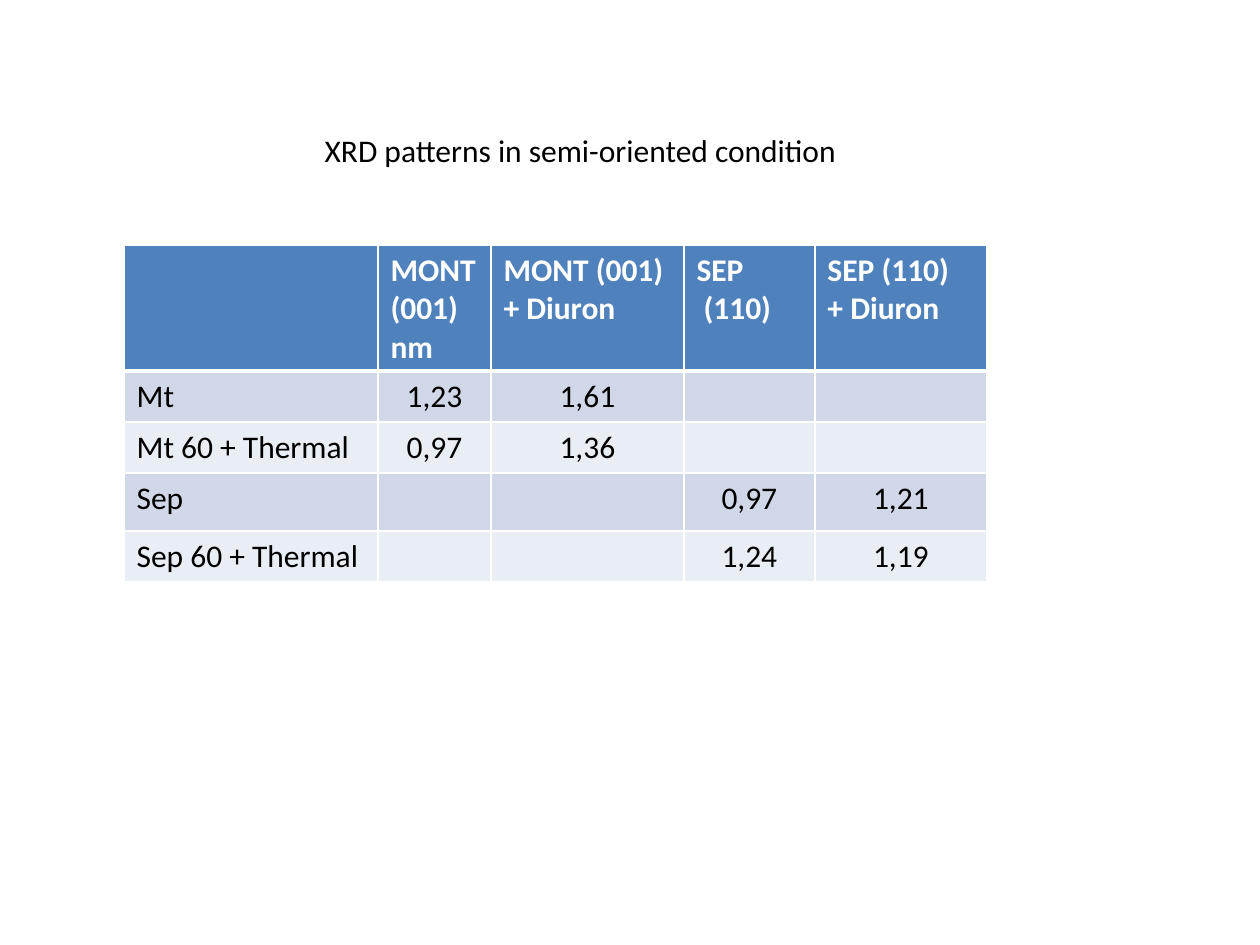
from lxml.etree import SubElement
from pptx import Presentation
from pptx.dml.color import RGBColor
from pptx.enum.text import MSO_ANCHOR as Anchor, MSO_AUTO_SIZE as AutoSize, PP_ALIGN as Align
from pptx.oxml.ns import qn
from pptx.util import Pt

EMU_PER_PX = 914400 / 126
WHITE, BLACK, BLUE = "FFFFFF", "000000", "4F81BD"
BANDS = ["D0D8E8", "E9EDF4"]
COLUMN_WIDTHS = [254, 113, 193, 131, 172]
ROW_HEIGHTS = [125, 51, 51, 58, 51]
ROWS = [
    ["", "MONT (001)\nnm", "MONT (001)\n+ Diuron", "SEP\n (110)", "SEP (110)\n+ Diuron"],
    ["Mt", "1,23", "1,61", "", ""],
    ["Mt 60 + Thermal", "0,97", "1,36", "", ""],
    ["Sep", "", "", "0,97", "1,21"],
    ["Sep 60 + Thermal", "", "", "1,24", "1,19"],
]


def px(length):
    return round(length * EMU_PER_PX)


def rgb(color):
    return RGBColor.from_string(color)


def write(frame, text, color, align=Align.LEFT, bold=False):
    frame.text = text
    for paragraph in frame.paragraphs:
        paragraph.alignment = align
        font = paragraph.font
        for name, value in {"name": "Calibri", "size": Pt(18), "bold": bold}.items():
            setattr(font, name, value)
        font.color.rgb = rgb(color)
        for run in paragraph.runs:
            run.font.size, run.font.bold, run.font.name = Pt(18), bold, "Calibri"
            run.font.color.rgb = rgb(color)


def add_borders(cell, widths):
    """Draw white borders; widths maps a side (L, R, T, B in that order) to points."""
    properties = cell._tc.get_or_add_tcPr()
    for side, width in widths.items():
        line = SubElement(properties, qn(f"a:ln{side}"), w=str(Pt(width)))
        fill = SubElement(line, qn("a:solidFill"))
        SubElement(fill, qn("a:srgbClr"), val=WHITE)


def place_title(slide, left, top, width, height):
    title = slide.shapes.title
    box = {"left": left, "top": top, "width": width, "height": height}
    for name, value in box.items():
        setattr(title, name, px(value))
    frame = title.text_frame
    write(frame, "XRD patterns in semi-oriented condition", BLACK)
    layout = {"vertical_anchor": Anchor.TOP, "word_wrap": True,
              "auto_size": AutoSize.SHAPE_TO_FIT_TEXT}
    for name, value in layout.items():
        setattr(frame, name, value)


def place_spacing_table(slide, left, top):
    """Place the table of basal spacings, sized by its columns and rows."""
    table = slide.shapes.add_table(
        len(ROWS), len(COLUMN_WIDTHS), px(left), px(top),
        px(sum(COLUMN_WIDTHS)), px(sum(ROW_HEIGHTS))).table
    for column, width in zip(table.columns, COLUMN_WIDTHS):
        column.width = px(width)
    for r, (height, texts) in enumerate(zip(ROW_HEIGHTS, ROWS)):
        table.rows[r].height = px(height)
        header = r == 0
        for c, text in enumerate(texts):
            cell = table.cell(r, c)
            write(cell.text_frame, text, WHITE if header else BLACK,
                  Align.LEFT if header or c == 0 else Align.CENTER, header)
            add_borders(cell, {"L": 1, "R": 1, "T": 3 if r == 1 else 1, "B": 3 if header else 1})
            cell.fill.solid()
            cell.fill.fore_color.rgb = rgb(BLUE if header else BANDS[(r - 1) % 2])


def main():
    deck = Presentation()
    deck.slide_width, deck.slide_height = px(1260), px(945)
    slide = deck.slides.add_slide(deck.slide_layouts[5])
    place_title(slide, 312, 125, 665, 51)
    place_spacing_table(slide, 124, 245)
    deck.save("out.pptx")


if __name__ == "__main__":
    main()
